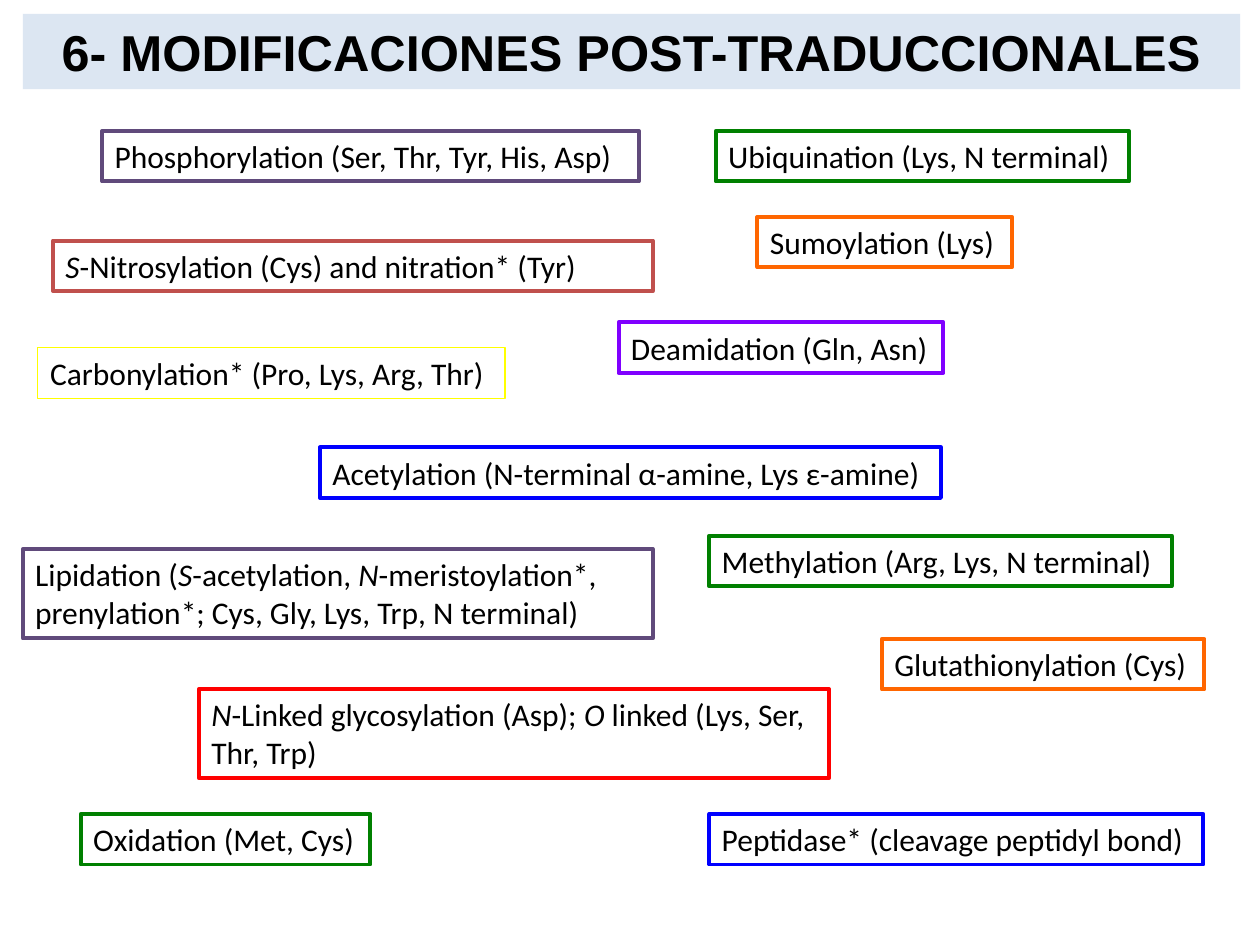
from pptx import Presentation
from pptx.dml.color import RGBColor
from pptx.enum.text import MSO_ANCHOR as Anchor, MSO_AUTO_SIZE as Fit, PP_ALIGN as Align
from pptx.util import Cm, Pt

# Content: text between underscores is italic
TITLE = "6- MODIFICACIONES POST-TRADUCCIONALES"
PURPLE, GREEN, ORANGE, BLUE = "604A7B", "008000", "FF6600", "0000FF"
ROW, TALL = 1.02, 1.8  # height of one and two lines of text, cm

# (text, left, top, width in cm, height, border colour)
BOXES = [
    ("Phosphorylation (Ser, Thr, Tyr, His, Asp)", 2.06, 2.64, 10.82, ROW, PURPLE),
    ("_S_-Nitrosylation (Cys) and nitration* (Tyr)", 1.07, 4.85, 12.09, ROW, "C0504D"),
    ("Acetylation (N-terminal α-amine, Lys ε-amine)", 6.45, 9.02, 12.52, ROW, BLUE),
    ("Deamidation (Gln, Asn)", 12.47, 6.5, 6.55, ROW, "8000FF"),
    ("Lipidation (_S_-acetylation, _N_-meristoylation*, prenylation*; "
     "Cys, Gly, Lys, Trp, N terminal)", 0.46, 11.07, 12.7, TALL, PURPLE),
    ("_N_-Linked glycosylation (Asp); _O_ linked (Lys, Ser, Thr, Trp)",
     4.01, 13.89, 12.7, TALL, "FF0000"),
    ("Ubiquination (Lys, N terminal)", 14.43, 2.64, 8.33, ROW, GREEN),
    ("Sumoylation (Lys)", 15.27, 4.37, 5.13, ROW, ORANGE),
    ("Carbonylation* (Pro, Lys, Arg, Thr)", 0.76, 7.01, 9.42, ROW, "FFFF00"),
    ("Methylation (Arg, Lys, N terminal)", 14.3, 10.8, 9.32, ROW, GREEN),
    ("Glutathionylation (Cys)", 17.78, 12.88, 6.5, ROW, ORANGE),
    ("Oxidation (Met, Cys)", 1.63, 16.41, 5.84, ROW, GREEN),
    ("Peptidase* (cleavage peptidyl bond)", 14.3, 16.41, 9.96, ROW, BLUE),
]
THIN = {"FFFF00"}  # colours drawn with a fine border


def paint(color, code):
    color.rgb = RGBColor.from_string(code)


def add_run(par, text, face, size, bold=False, slant=False):
    run = par.add_run()
    run.text = text
    font = run.font
    font.name, font.size = face, Pt(size)
    font.bold, font.italic = bold, slant
    paint(font.color, "000000")


def add_box(slide, text, left, top, width, height, edge):
    box = slide.shapes.add_textbox(Cm(left), Cm(top), Cm(width), Cm(height))
    box.line.width = Pt(0.75 if edge in THIN else 2.25)
    paint(box.line.color, edge)
    frame = box.text_frame
    frame.word_wrap = True
    for i, part in enumerate(text.split("_")):
        if part:
            add_run(frame.paragraphs[0], part, "Calibri", 18, slant=i % 2 == 1)


def add_title(slide):
    title = slide.shapes.title
    title.left, title.top = Cm(0.46), Cm(0.28)
    title.width, title.height = Cm(24.54), Cm(1.52)
    title.fill.solid()
    paint(title.fill.fore_color, "DCE6F2")
    frame = title.text_frame
    frame.auto_size = Fit.NONE
    frame.vertical_anchor = Anchor.MIDDLE
    par = frame.paragraphs[0]
    par.alignment = Align.CENTER
    add_run(par, TITLE, "Arial", 28.8, bold=True)


def main():
    deck = Presentation()
    deck.slide_width, deck.slide_height = Cm(25.4), Cm(19.05)
    slide = deck.slides.add_slide(deck.slide_layouts[5])
    add_title(slide)
    for box in BOXES:
        add_box(slide, *box)
    deck.save("out.pptx")


if __name__ == "__main__":
    main()
